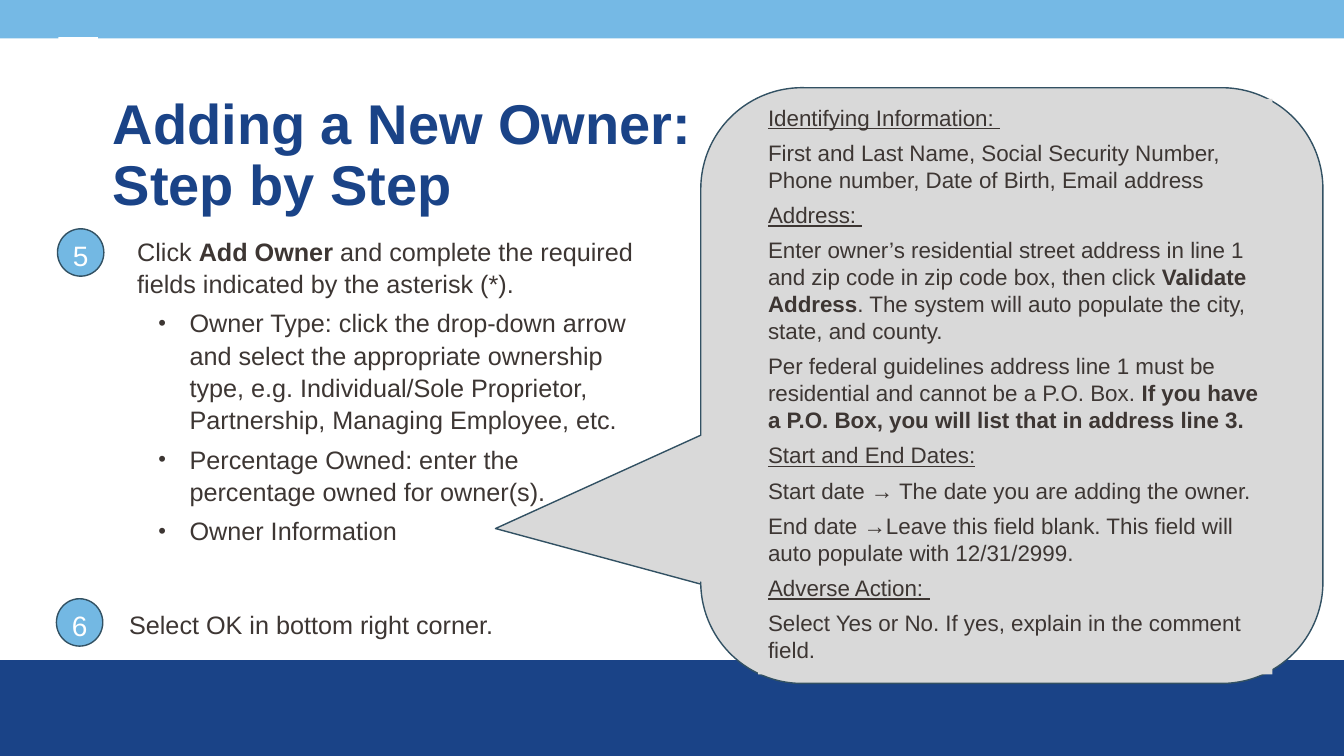
from dataclasses import dataclass

from lxml.etree import SubElement
from pptx import Presentation
from pptx.dml.color import RGBColor
from pptx.enum.shapes import MSO_SHAPE as Preset
from pptx.enum.text import MSO_ANCHOR as Anchor
from pptx.enum.text import MSO_AUTO_SIZE as AutoSize
from pptx.enum.text import PP_ALIGN as Align
from pptx.oxml.ns import qn
from pptx.shapes.autoshape import Shape
from pptx.text.text import TextFrame, _Paragraph as Paragraph
from pptx.util import Inches, Pt

NAVY, SKY, STEP_BLUE, WHITE = "1A4387", "75B9E5", "73B8E3", "FFFFFF"
OUTLINE, PANEL_GREY, INK = "325163", "D9D9D9", "3D3633"
FONT = "Arial"


@dataclass(frozen=True)
class Area:
    """A rectangle in percent of the slide's width and height."""
    left: float
    top: float
    width: float
    height: float


@dataclass(frozen=True)
class Band:
    area: Area
    color: str


@dataclass(frozen=True)
class Step:
    number: str
    area: Area


@dataclass(frozen=True)
class Instruction:
    """Text marks bold parts with **; indents are inches, space is points."""
    text: str
    margin: float
    hanging: float = 0
    space_before: float = 5


@dataclass(frozen=True)
class Detail:
    text: str
    heading: bool = False


BANDS = [
    Band(Area(-0.3, 87.33, 100.6, 13.47), NAVY),
    Band(Area(-0.08, 0, 100.08, 5.07), SKY),
    Band(Area(4.35, 4.93, 2.93, 5.47), WHITE),
]
TITLE_AREA = Area(7.65, 11.07, 46.29, 19.33)
BODY_AREA = Area(7.28, 30.27, 41.86, 60.13)
CALLOUT_AREA = Area(52.14, 11.6, 46.29, 78.8)
DETAILS_AREA = Area(56.41, 13.07, 38.26, 76.13)
STEPS = [
    Step("5", Area(4.28, 30.27, 3.45, 6.27)),
    Step("6", Area(4.2, 79.2, 3.45, 6.27)),
]
INSTRUCTIONS = [
    Instruction("Click **Add Owner** and complete the required fields "
                "indicated by the asterisk (*).", 0.29, space_before=0),
    Instruction("Owner Type: click the drop-down arrow and select the appropriate "
                "ownership type, e.g. Individual/Sole Proprietor, Partnership, "
                "Managing Employee, etc.", 0.81, 0.31),
    Instruction("Percentage Owned: enter the percentage owned for owner(s).", 0.81, 0.31),
    Instruction("Owner Information", 0.81, 0.31),
    Instruction("Select OK in bottom right corner.", 0.21, space_before=44),
]
DETAILS = [
    Detail("Identifying Information: ", heading=True),
    Detail("First and Last Name, Social Security Number, Phone number, "
           "Date of Birth, Email address"),
    Detail("Address: ", heading=True),
    Detail("Enter owner’s residential street address in line 1 and zip code in zip "
           "code box, then click **Validate Address**. The system will auto populate "
           "the city, state, and county."),
    Detail("Per federal guidelines address line 1 must be residential and cannot be a "
           "P.O. Box. **If you have a P.O. Box, you will list that in address line 3.**"),
    Detail("Start and End Dates:", heading=True),
    Detail("Start date → The date you are adding the owner."),
    Detail("End date →Leave this field blank. This field will auto populate "
           "with 12/31/2999."),
    Detail("Adverse Action: ", heading=True),
    Detail("Select Yes or No. If yes, explain in the comment field."),
]

deck = Presentation()
deck.slide_width, deck.slide_height = Inches(13.33), Inches(7.5)
slide = deck.slides.add_slide(deck.slide_layouts[1])


def rgb(color: str) -> RGBColor:
    return RGBColor.from_string(color)


def bounds(area: Area) -> tuple[int, int, int, int]:
    """Turn percentages into left, top, width and height on the slide."""
    across, down = deck.slide_width / 100, deck.slide_height / 100
    return (round(area.left * across), round(area.top * down),
            round(area.width * across), round(area.height * down))


def place(placeholder: Shape, area: Area) -> TextFrame:
    (placeholder.left, placeholder.top,
     placeholder.width, placeholder.height) = bounds(area)
    frame = placeholder.text_frame
    frame.word_wrap, frame.auto_size = True, AutoSize.NONE
    return frame


def add_filled(preset: Preset, area: Area, fill: str, line: str | None = None) -> Shape:
    shape = slide.shapes.add_shape(preset, *bounds(area))
    shape.shadow.inherit = False
    shape.fill.solid()
    shape.fill.fore_color.rgb = rgb(fill)
    if line:
        shape.line.color.rgb, shape.line.width = rgb(line), Pt(1)
    else:
        shape.line.fill.background()
    return shape


def set_font(paragraph: Paragraph, size: float, color: str) -> None:
    paragraph.font.name, paragraph.font.size = FONT, Pt(size)
    paragraph.font.color.rgb = rgb(color)


def add_runs(paragraph: Paragraph, text: str) -> None:
    """Write the text, setting the parts between ** marks in bold."""
    for index, part in enumerate(text.split("**")):
        if part:
            run = paragraph.add_run()
            run.text = part
            if index % 2:
                run.font.bold = True


def next_paragraph(frame: TextFrame, index: int) -> Paragraph:
    return frame.add_paragraph() if index else frame.paragraphs[0]


def set_bullet(paragraph: Paragraph, margin: float, hanging: float) -> None:
    """Indent the paragraph; a hanging indent also gets a bullet."""
    properties = paragraph._p.get_or_add_pPr()
    properties.set("marL", str(Inches(margin)))
    properties.set("indent", str(-Inches(hanging)))
    if hanging:
        SubElement(properties, qn("a:buSzPct"), val="87000")
        SubElement(properties, qn("a:buFont"), typeface=FONT)
        SubElement(properties, qn("a:buChar"), char="•")
    else:
        SubElement(properties, qn("a:buNone"))


def write_title() -> None:
    frame = place(slide.shapes.title, TITLE_AREA)
    frame.vertical_anchor = Anchor.MIDDLE
    frame.text = "Adding a New Owner:\vStep by Step"
    heading = frame.paragraphs[0]
    heading.alignment, heading.line_spacing = Align.LEFT, 0.9
    set_font(heading, 40, NAVY)
    heading.font.bold = True


def write_instructions() -> None:
    frame = place(slide.placeholders[1], BODY_AREA)
    for index, item in enumerate(INSTRUCTIONS):
        paragraph = next_paragraph(frame, index)
        set_bullet(paragraph, item.margin, item.hanging)
        paragraph.level = 1 if item.hanging else 0
        paragraph.line_spacing = 1.07
        paragraph.space_before = Pt(item.space_before)
        set_font(paragraph, 18, INK)
        add_runs(paragraph, item.text)


def add_details_callout() -> None:
    callout = add_filled(Preset.ROUNDED_RECTANGULAR_CALLOUT, CALLOUT_AREA,
                         PANEL_GREY, OUTLINE)
    for index, value in enumerate((-0.83, 0.24, 0.17)):
        callout.adjustments[index] = value
    frame = add_filled(Preset.RECTANGLE, DETAILS_AREA, PANEL_GREY).text_frame
    frame.word_wrap, frame.auto_size = True, AutoSize.SHAPE_TO_FIT_TEXT
    frame.vertical_anchor = Anchor.TOP
    for index, detail in enumerate(DETAILS):
        paragraph = next_paragraph(frame, index)
        paragraph.alignment, paragraph.space_after = Align.LEFT, Pt(6)
        set_font(paragraph, 16, INK)
        paragraph.font.underline = detail.heading
        add_runs(paragraph, detail.text)


def add_step(step: Step) -> None:
    frame = add_filled(Preset.FLOWCHART_CONNECTOR, step.area, STEP_BLUE, OUTLINE).text_frame
    frame.margin_left = frame.margin_right = frame.margin_bottom = 0
    frame.margin_top = Inches(0.05)
    frame.word_wrap, frame.vertical_anchor = False, Anchor.MIDDLE
    number = frame.paragraphs[0]
    number.alignment = Align.CENTER
    set_font(number, 20, WHITE)
    add_runs(number, step.number)


for band in BANDS:
    add_filled(Preset.RECTANGLE, band.area, band.color)
write_title()
write_instructions()
add_details_callout()
for step in STEPS:
    add_step(step)
deck.save("out.pptx")
